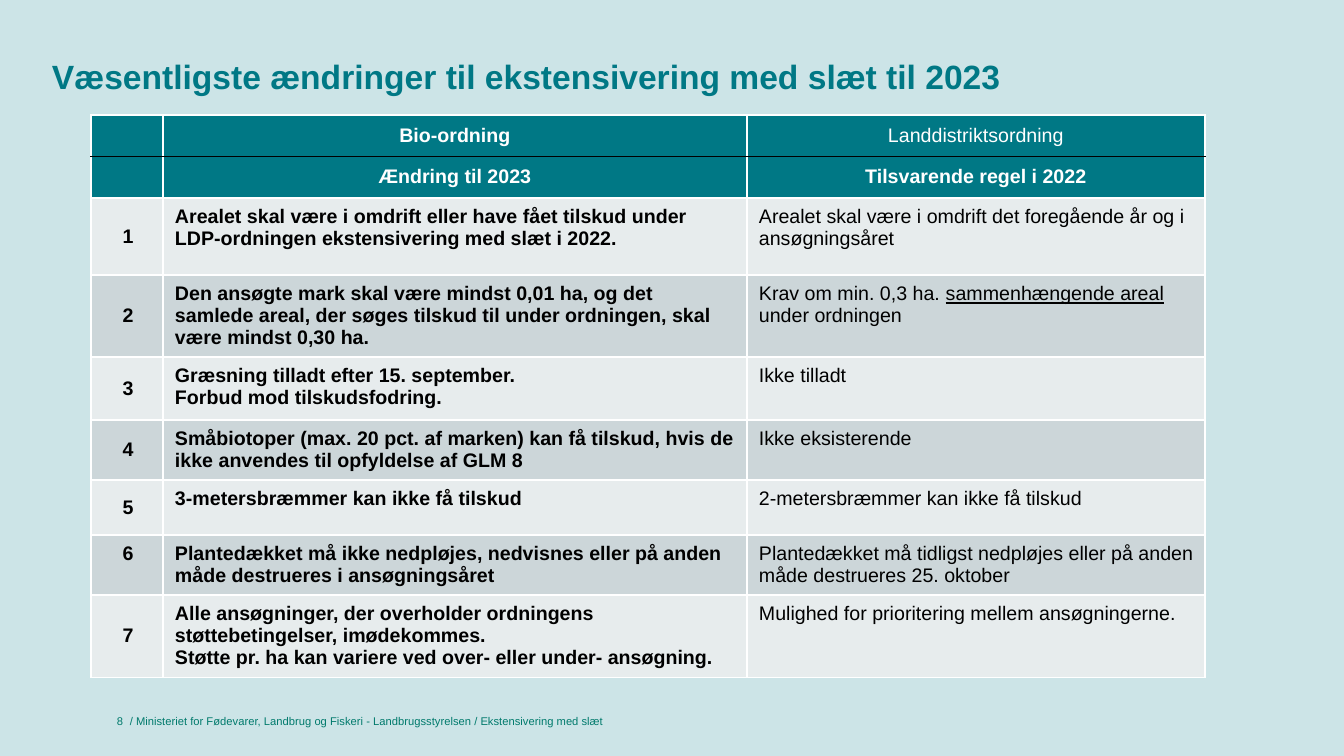
from lxml import etree
from pptx import Presentation
from pptx.dml.color import RGBColor
from pptx.enum.text import MSO_ANCHOR, PP_ALIGN
from pptx.oxml.ns import qn
from pptx.util import Emu, Pt

TOP, MIDDLE, BOTTOM = MSO_ANCHOR.TOP, MSO_ANCHOR.MIDDLE, MSO_ANCHOR.BOTTOM
LEFT, CENTER, RIGHT = PP_ALIGN.LEFT, PP_ALIGN.CENTER, PP_ALIGN.RIGHT

FONT = "Arial"
TEAL, FOOTER_GREEN, BACKDROP = "007885", "007A6C", "CCE4E7"
WHITE, BLACK = "FFFFFF", "000000"
BANDS = ("E7ECED", "CCD6D9")

COLUMNS = (72, 584, 458)
HEADER_HEIGHTS = (41, 42)
HEADERS = (
    (("", True), ("Bio-ordning", True), ("Landdistriktsordning", False)),
    (("", True), ("Ændring til 2023", True), ("Tilsvarende regel i 2022", True)),
)
RULES = (
    (77, MIDDLE,
     ["Arealet skal være i omdrift eller have fået tilskud under LDP-ordningen ekstensivering med slæt i 2022."],
     "Arealet skal være i omdrift det foregående år og i ansøgningsåret"),
    (82, MIDDLE,
     ["Den ansøgte mark skal være mindst 0,01 ha, og det samlede areal, der søges tilskud til under ordningen, "
      "skal være mindst 0,30 ha."],
     [("Krav om min. 0,3 ha. ", False), ("sammenhængende areal ", True), ("under ordningen", False)]),
    (63, MIDDLE,
     ["Græsning tilladt efter 15. september.", "Forbud mod tilskudsfodring."],
     "Ikke tilladt"),
    (60, MIDDLE,
     ["Småbiotoper (max. 20 pct. af marken) kan få tilskud, hvis de ikke anvendes til opfyldelse af GLM 8"],
     "Ikke eksisterende"),
    (55, MIDDLE,
     ["3-metersbræmmer kan ikke få tilskud"],
     "2-metersbræmmer kan ikke få tilskud"),
    (60, TOP,
     ["Plantedækket må ikke nedpløjes, nedvisnes eller på anden måde destrueres i ansøgningsåret"],
     "Plantedækket må tidligst nedpløjes eller på anden måde destrueres 25. oktober"),
    (82, MIDDLE,
     ["Alle ansøgninger, der overholder ordningens støttebetingelser, imødekommes.",
      "Støtte pr. ha kan variere ved over- eller under- ansøgning."],
     "Mulighed for prioritering mellem ansøgningerne."),
)


def px(length):
    """Turn whole pixels into EMU."""
    return Emu(round(length * 914400 / 100.8))


def colour(code):
    """Turn a hex string into a colour."""
    return RGBColor.from_string(code)


def write(frame, paragraphs, size=14, color=BLACK, bold=False, align=LEFT, spacing=None):
    """Fill a text frame with paragraphs, each a string or (text, underlined) spans."""
    for index, content in enumerate(paragraphs):
        para = frame.paragraphs[0] if index == 0 else frame.add_paragraph()
        para.alignment = align
        if spacing:
            para.line_spacing = spacing
        spans = [(content, False)] if isinstance(content, str) else content
        for text, underlined in spans:
            span = para.add_run()
            span.text = text
            span.font.name = FONT
            span.font.size = Pt(size)
            span.font.bold = bold
            span.font.underline = underlined
            span.font.color.rgb = colour(color)


def set_frame(frame, anchor):
    """Give a text frame wrapping, no insets and an anchor."""
    frame.word_wrap = True
    frame.margin_left = frame.margin_top = frame.margin_right = frame.margin_bottom = 0
    frame.vertical_anchor = anchor


def add_title(page, left, top, width, height):
    """Place and format the title placeholder."""
    title = page.shapes.title
    title.left, title.top, title.width, title.height = map(px, (left, top, width, height))
    set_frame(title.text_frame, TOP)
    write(title.text_frame, ["Væsentligste ændringer til ekstensivering med slæt til 2023"],
          size=24, color=TEAL, bold=True, spacing=0.9)


def add_footer(page, left, top, width, height):
    """Place the page number and the footer line."""
    number_right = 123
    line = "/ Ministeriet for Fødevarer, Landbrug og Fiskeri - Landbrugsstyrelsen / Ekstensivering med slæt"
    for text, start, span_width in (("8", left + number_right - 33, 33), (line, left, width)):
        box = page.shapes.add_textbox(px(start), px(top), px(span_width), px(height))
        set_frame(box.text_frame, BOTTOM)
        write(box.text_frame, [text], size=8, color=FOOTER_GREEN, align=RIGHT)


def style_cell(cell, fill, anchor, margins, black_side=None):
    """Set a cell's borders, fill, anchor and margins."""
    properties = cell._tc.get_or_add_tcPr()
    for side in ("lnL", "lnR", "lnT", "lnB"):
        code, points = (BLACK, 0.5) if side == black_side else (WHITE, 1)
        line = etree.SubElement(properties, qn("a:" + side), w=str(Pt(points)))
        solid = etree.SubElement(line, qn("a:solidFill"))
        etree.SubElement(solid, qn("a:srgbClr"), val=code)
    cell.fill.solid()
    cell.fill.fore_color.rgb = colour(fill)
    cell.vertical_anchor = anchor
    cell.margin_left, cell.margin_top, cell.margin_right, cell.margin_bottom = map(px, margins)


def add_rules_table(page, left, top):
    """Build the table comparing the rules of 2023 and 2022."""
    heights = HEADER_HEIGHTS + tuple(rule[0] for rule in RULES)
    frame = page.shapes.add_table(len(heights), len(COLUMNS), px(left), px(top),
                                  px(sum(COLUMNS)), px(sum(heights)))
    table = frame.table
    for column, width in zip(table.columns, COLUMNS):
        column.width = px(width)
    for row, height in zip(table.rows, heights):
        row.height = px(height)

    for row, (headers, black_side) in enumerate(zip(HEADERS, ("lnB", "lnT"))):
        for column, (text, bold) in enumerate(headers):
            cell = table.cell(row, column)
            style_cell(cell, TEAL, MIDDLE, (10, 5, 10, 5), black_side)
            if text:
                write(cell.text_frame, [text], color=WHITE, bold=bold, align=CENTER)

    for number, (_, number_anchor, change, former) in enumerate(RULES, 1):
        parts = (
            ([str(number)], True, CENTER, number_anchor),
            (change, True, LEFT, TOP),
            ([former], False, LEFT, TOP),
        )
        for column, (paragraphs, bold, align, anchor) in enumerate(parts):
            cell = table.cell(number + len(HEADERS) - 1, column)
            style_cell(cell, BANDS[(number - 1) % 2], anchor, (12, 8, 10, 8))
            write(cell.text_frame, paragraphs, bold=bold, align=align)


def main():
    """Build and save the deck."""
    deck = Presentation()
    deck.slide_width, deck.slide_height = px(1344), px(756)
    page = deck.slides.add_slide(deck.slide_layouts[5])
    page.background.fill.solid()
    page.background.fill.fore_color.rgb = colour(BACKDROP)
    add_title(page, 52, 60, 1200, 51)
    add_rules_table(page, 91, 115)
    add_footer(page, 0, 706, 604, 22)
    deck.save("out.pptx")


if __name__ == "__main__":
    main()
